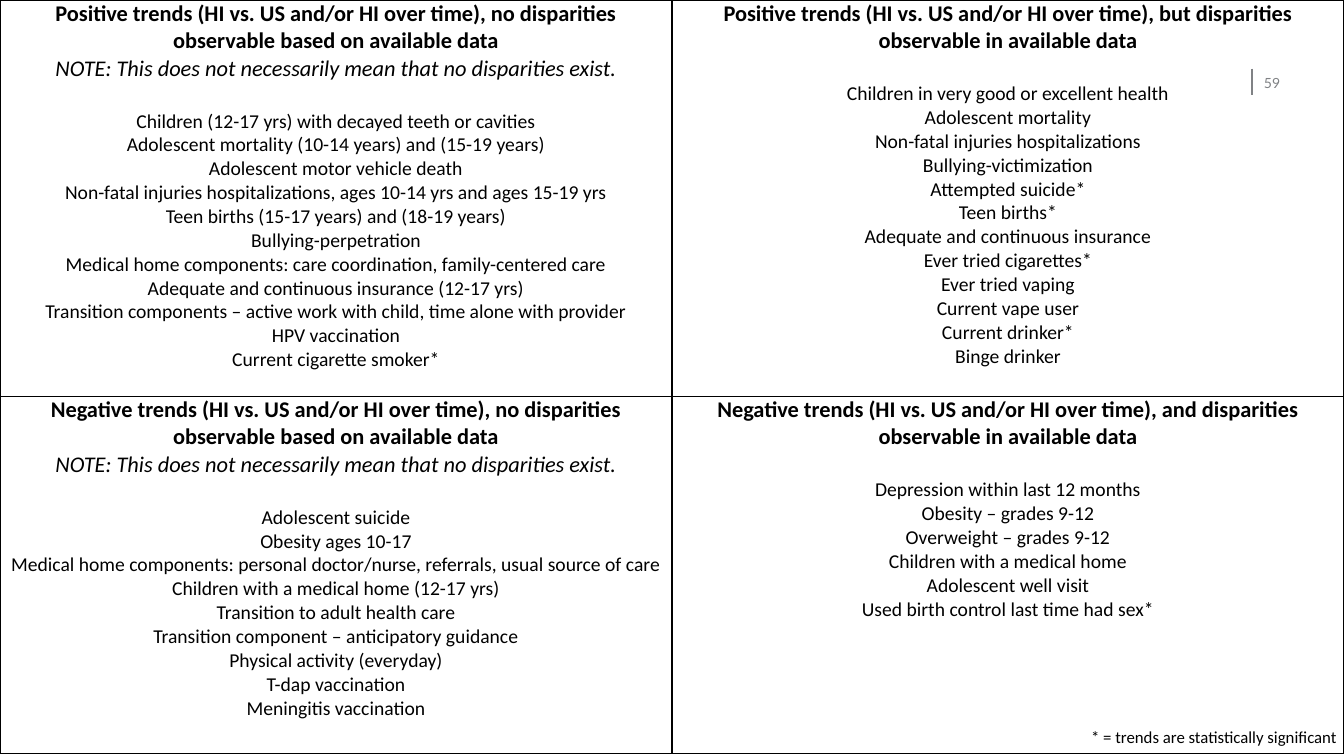
from lxml import etree
from pptx import Presentation
from pptx.dml.color import RGBColor
from pptx.enum import shapes, text
from pptx.oxml import ns
from pptx.util import Pt

BLACK = RGBColor(0x00, 0x00, 0x00)
GREY = RGBColor(0x80, 0x82, 0x85)

NOTE = "NOTE: This does not necessarily mean that no disparities exist."
FOOTNOTE = "* = trends are statistically significant"
PAGE_NUMBER = "59"

QUADRANTS = [
    [
        {
            "heading": "Positive trends (HI vs. US and/or HI over time), no disparities observable based on available data",
            "note": NOTE,
            "items": [
                "Children (12-17 yrs) with decayed teeth or cavities",
                "Adolescent mortality (10-14 years) and (15-19 years)",
                "Adolescent motor vehicle death",
                "Non-fatal injuries hospitalizations, ages 10-14 yrs and ages 15-19 yrs",
                "Teen births (15-17 years) and (18-19 years)",
                "Bullying-perpetration",
                "Medical home components: care coordination, family-centered care",
                "Adequate and continuous insurance (12-17 yrs)",
                "Transition components – active work with child, time alone with provider",
                "HPV vaccination",
                "Current cigarette smoker*",
            ],
        },
        {
            "heading": "Positive trends (HI vs. US and/or HI over time), but disparities observable in available data",
            "items": [
                "Children in very good or excellent health",
                "Adolescent mortality",
                "Non-fatal injuries hospitalizations",
                "Bullying-victimization",
                "Attempted suicide*",
                "Teen births*",
                "Adequate and continuous insurance",
                "Ever tried cigarettes*",
                "Ever tried vaping",
                "Current vape user",
                "Current drinker*",
                "Binge drinker",
            ],
        },
    ],
    [
        {
            "heading": "Negative trends (HI vs. US and/or HI over time), no disparities observable based on available data",
            "note": NOTE,
            "items": [
                "Adolescent suicide",
                "Obesity ages 10-17",
                "Medical home components: personal doctor/nurse, referrals, usual source of care",
                "Children with a medical home (12-17 yrs)",
                "Transition to adult health care",
                "Transition component – anticipatory guidance",
                "Physical activity (everyday)",
                "T-dap vaccination",
                "Meningitis vaccination",
            ],
        },
        {
            "heading": "Negative trends (HI vs. US and/or HI over time), and disparities observable in available data",
            "items": [
                "Depression within last 12 months",
                "Obesity – grades 9-12",
                "Overweight – grades 9-12",
                "Children with a medical home",
                "Adolescent well visit",
                "Used birth control last time had sex*",
            ],
            "footnote": FOOTNOTE,
        },
    ],
]

PAGE_WIDTH, PAGE_HEIGHT = 960, 540
ROW_HEIGHTS = [283, 255]
COLUMN_WIDTH = PAGE_WIDTH / 2
LIST_GAP = 19.5
FOOTNOTE_GAP = 75.7


def write(frame, words, size=14, font="Calibri", color=BLACK, bold=False,
          italic=False, align=text.PP_ALIGN.CENTER, before=0):
    para = frame.paragraphs[0] if not frame.text else frame.add_paragraph()
    para.alignment = align
    para.space_before = Pt(before)
    span = para.add_run()
    span.text = words
    span.font.size = Pt(size)
    span.font.name = font
    span.font.color.rgb = color
    span.font.bold = bold
    span.font.italic = italic


def outline(cell):
    properties = cell._tc.get_or_add_tcPr()
    for side in ("a:lnL", "a:lnR", "a:lnT", "a:lnB"):
        edge = etree.SubElement(properties, ns.qn(side), w=str(Pt(1)))
        fill = etree.SubElement(edge, ns.qn("a:solidFill"))
        etree.SubElement(fill, ns.qn("a:srgbClr"), val=str(BLACK))


def fill_cell(cell, quadrant):
    outline(cell)
    cell.fill.background()
    cell.margin_left = cell.margin_right = Pt(5)
    cell.margin_top = cell.margin_bottom = 0
    frame = cell.text_frame
    write(frame, quadrant["heading"], size=16, bold=True)
    if "note" in quadrant:
        write(frame, quadrant["note"], size=16, italic=True)
    for index, item in enumerate(quadrant["items"]):
        write(frame, item, before=0 if index else LIST_GAP)
    if "footnote" in quadrant:
        write(frame, quadrant["footnote"], size=12,
              align=text.PP_ALIGN.RIGHT, before=FOOTNOTE_GAP)


def add_page_number(page):
    rule = page.shapes.add_connector(
        shapes.MSO_CONNECTOR.STRAIGHT, Pt(894.2), Pt(49), Pt(894.2), Pt(67.7))
    rule.line.color.rgb = GREY
    rule.line.width = Pt(1)
    etree.SubElement(rule._element.spPr, ns.qn("a:effectLst"))
    box = page.shapes.add_textbox(Pt(902.9), Pt(44.6), Pt(23.8), Pt(28.8))
    frame = box.text_frame
    frame.word_wrap = True
    frame.vertical_anchor = text.MSO_ANCHOR.MIDDLE
    frame.margin_left = frame.margin_right = 0
    write(frame, PAGE_NUMBER, size=10, font="Lato", color=GREY,
          align=text.PP_ALIGN.LEFT)


def add_quadrants(page):
    table = page.shapes.add_table(
        2, 2, 0, 0, Pt(PAGE_WIDTH), Pt(sum(ROW_HEIGHTS))).table
    table.first_row = table.horz_banding = False
    for column in table.columns:
        column.width = Pt(COLUMN_WIDTH)
    for r, quadrants in enumerate(QUADRANTS):
        table.rows[r].height = Pt(ROW_HEIGHTS[r])
        for c, quadrant in enumerate(quadrants):
            fill_cell(table.cell(r, c), quadrant)


def main():
    deck = Presentation()
    deck.slide_width, deck.slide_height = Pt(PAGE_WIDTH), Pt(PAGE_HEIGHT)
    page = deck.slides.add_slide(deck.slide_layouts[6])
    add_page_number(page)
    add_quadrants(page)
    deck.save("out.pptx")


if __name__ == "__main__":
    main()
